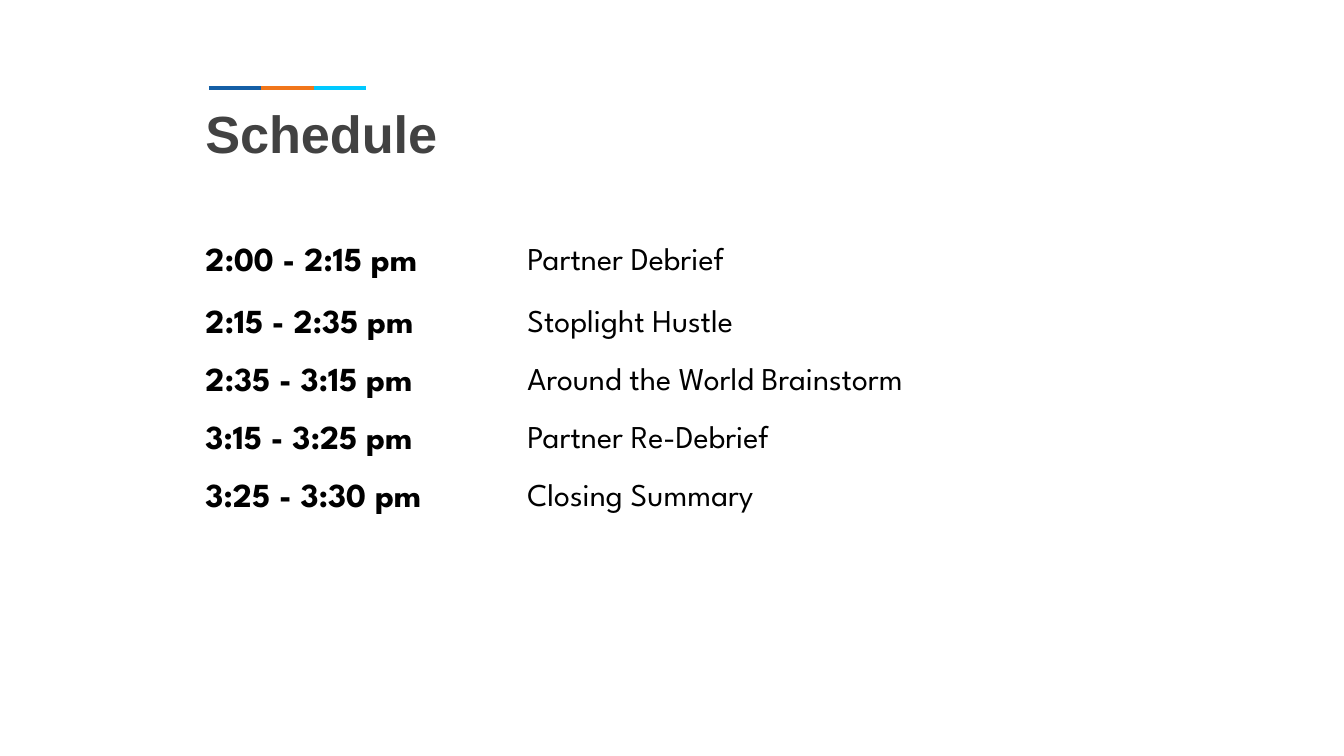
from pptx import Presentation
from pptx import util as u
from pptx.dml.color import RGBColor
from pptx.enum import shapes, text
from pptx.oxml.ns import qn
from lxml import etree

TITLE = "Schedule"
SCHEDULE = [
    ("2:00 - 2:15 pm", "Partner Debrief"),
    ("2:15 - 2:35 pm", "Stoplight Hustle"),
    ("2:35 - 3:15 pm", "Around the World Brainstorm"),
    ("3:15 - 3:25 pm", "Partner Re-Debrief"),
    ("3:25 - 3:30 pm", "Closing Summary"),
]
COLORS = {"blue": "145FA6", "orange": "F1761A", "cyan": "00C9FF",
          "title": "424242", "body": "000000"}
ACCENTS = ("blue", "orange", "cyan")

EMU_PER_PX = 914400 / 134.4
LEFT = 192
ACCENT_LEFT, ACCENT_TOP, ACCENT_WIDTH = 209, 88, 52.5
TABLE_TOP = 235
COLUMN_WIDTHS = (322, 614)
FIRST_ROW_HEIGHT, ROW_HEIGHT = 62, 58
INSET = u.Inches(0.1)


def px(length):
    return u.Emu(round(length * EMU_PER_PX))


def color(name):
    return RGBColor.from_string(COLORS[name])


def set_insets(box, bottom=INSET):
    box.margin_left = box.margin_right = box.margin_top = INSET
    box.margin_bottom = bottom
    box.vertical_anchor = text.MSO_ANCHOR.TOP


def write(text_frame, words, size, font_name, color_name, bold):
    text_frame.text = words
    font = text_frame.paragraphs[0].runs[0].font
    font.size, font.name, font.bold = u.Pt(size), font_name, bold
    font.color.rgb = color(color_name)


def add_accent_line(slide):
    for index, name in enumerate(ACCENTS):
        start = ACCENT_LEFT + index * ACCENT_WIDTH
        line = slide.shapes.add_connector(
            shapes.MSO_CONNECTOR.STRAIGHT, px(start), px(ACCENT_TOP),
            px(start + ACCENT_WIDTH), px(ACCENT_TOP))
        line.line.color.rgb = color(name)
        line.line.width = u.Pt(2.25)
        etree.SubElement(line._element.spPr, qn("a:effectLst"))


def add_title(slide):
    box = slide.shapes.add_textbox(px(LEFT), px(88), px(1034), px(147))
    box.text_frame.word_wrap = True
    set_insets(box.text_frame)
    write(box.text_frame, TITLE, 28, "Arial", "title", True)


def add_schedule(slide):
    height = FIRST_ROW_HEIGHT + ROW_HEIGHT * (len(SCHEDULE) - 1)
    table = slide.shapes.add_table(
        len(SCHEDULE), len(COLUMN_WIDTHS), px(LEFT), px(TABLE_TOP),
        px(sum(COLUMN_WIDTHS)), px(height)).table
    table.first_row = table.horz_banding = False
    for column, width in zip(table.columns, COLUMN_WIDTHS):
        column.width = px(width)
    for index, (row, entry) in enumerate(zip(table.rows, SCHEDULE)):
        row.height = px(ROW_HEIGHT if index else FIRST_ROW_HEIGHT)
        for cell, words, size, bold in zip(row.cells, entry, (18, 17), (True, False)):
            cell.fill.background()
            # No bottom inset, so the text never stretches the row.
            set_insets(cell, bottom=0)
            write(cell.text_frame, words, size, "League Spartan", "body", bold)


def main():
    presentation = Presentation()
    presentation.slide_width, presentation.slide_height = px(1344), px(756)
    slide = presentation.slides.add_slide(presentation.slide_layouts[6])
    add_accent_line(slide)
    add_title(slide)
    add_schedule(slide)
    presentation.save("out.pptx")


if __name__ == "__main__":
    main()
